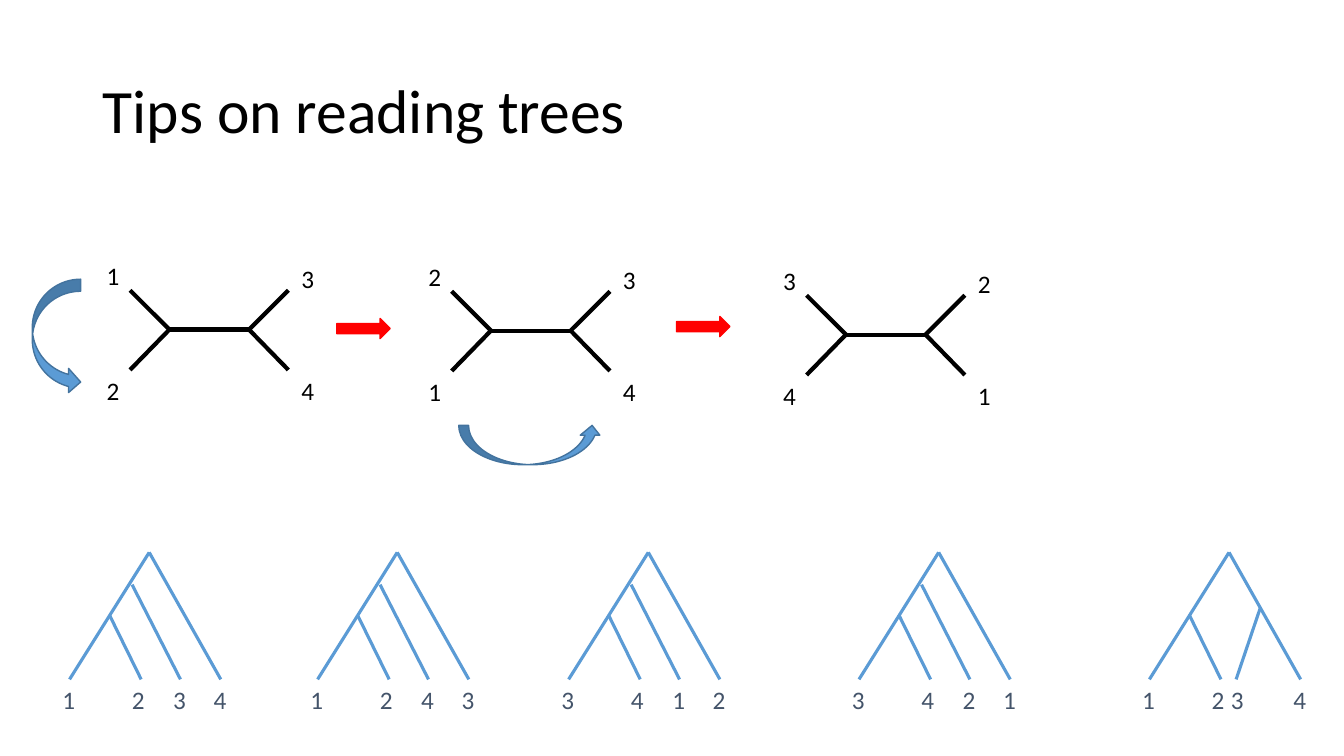
from lxml import etree
from pptx import Presentation
from pptx.dml.color import RGBColor
from pptx.enum import shapes, text
from pptx.oxml import ns
from pptx.util import Inches, Pt

BLACK = RGBColor(0x00, 0x00, 0x00)
BLUE = RGBColor(0x5B, 0x9B, 0xD5)
DARK_BLUE = RGBColor(0x43, 0x73, 0x9E)
SLATE = RGBColor(0x44, 0x54, 0x6A)
RED = RGBColor(0xFF, 0x00, 0x00)
FONT = "Calibri"

prs = Presentation()
prs.slide_width = Inches(13.33)
prs.slide_height = Inches(7.5)
slide = prs.slides.add_slide(prs.slide_layouts[5])


def add_branch(x1, y1, x2, y2, color, weight):
    branch = slide.shapes.add_connector(
        shapes.MSO_CONNECTOR.STRAIGHT, Inches(x1), Inches(y1), Inches(x2), Inches(y2))
    branch.line.color.rgb = color
    branch.line.width = Pt(weight)
    etree.SubElement(branch._element.spPr, ns.qn("a:effectLst"))


def add_taxon(name, x, y, color):
    taxon = slide.shapes.add_textbox(Inches(x), Inches(y), Inches(0.33), Inches(0.4))
    frame = taxon.text_frame
    frame.word_wrap = False
    frame.auto_size = text.MSO_AUTO_SIZE.SHAPE_TO_FIT_TEXT
    run = frame.paragraphs[0].add_run()
    run.text = name
    run.font.name = FONT
    run.font.size = Pt(18)
    run.font.color.rgb = color


# Title
title = slide.shapes.title
title.left, title.top = Inches(0.92), Inches(0.4)
title.width, title.height = Inches(11.5), Inches(1.45)
title.text_frame.vertical_anchor = text.MSO_ANCHOR.MIDDLE
heading = title.text_frame.paragraphs[0]
heading.alignment = text.PP_ALIGN.LEFT
heading.line_spacing = 0.9
heading_run = heading.add_run()
heading_run.text = "Tips on reading trees"
heading_run.font.name = FONT
heading_run.font.size = Pt(44)
heading_run.font.color.rgb = BLACK

# Unrooted trees: offsets from the upper left tip
UNROOTED_BRANCHES = [
    (0, 0, 0.39, 0.39),
    (0.39, 0.39, 0, 0.79),
    (0.39, 0.39, 1.18, 0.39),
    (1.57, 0, 1.18, 0.39),
    (1.18, 0.39, 1.57, 0.79),
]
UNROOTED_TAXA = [(-0.33, -0.35), (-0.33, 0.79), (1.6, -0.32), (1.6, 0.79)]
for left, top, taxa in [(1.29, 2.88, "1234"), (4.48, 2.89, "2134"), (8, 2.93, "3421")]:
    for x1, y1, x2, y2 in UNROOTED_BRANCHES:
        add_branch(left + x1, top + y1, left + x2, top + y2, BLACK, 3)
    for name, (dx, dy) in zip(taxa, UNROOTED_TAXA):
        add_taxon(name, left + dx, top + dy, BLACK)

# Rooted trees: the third tip branches off the left or the right side
ROOT_Y, TIP_Y = 5.48, 6.74
LADDER = ((0.62, 5.8, 1.1), 1.1)
BALANCED = ((1.1, 6.03, 0.86), 0.88)
for left, taxa, (third_branch, third_taxon_x) in [
    (0.69, "1234", LADDER),
    (3.15, "1243", LADDER),
    (5.64, "3412", LADDER),
    (8.52, "3421", LADDER),
    (11.4, "1234", BALANCED),
]:
    for x, y, tip_x in [(0.79, ROOT_Y, 0), (0.79, ROOT_Y, 1.5), (0.4, 6.11, 0.71), third_branch]:
        add_branch(left + x, y, left + tip_x, TIP_Y, BLUE, 2.25)
    for name, dx in zip(taxa, (0, 0.69, third_taxon_x, 1.5)):
        add_taxon(name, left + dx - 0.17, TIP_Y, SLATE)

# Rotation arrows and step arrows
ARROWS = shapes.MSO_SHAPE
for kind, x, y, width, height, fill, outline in [
    (ARROWS.CURVED_RIGHT_ARROW, 0.32, 2.77, 0.48, 1.14, BLUE, DARK_BLUE),
    (ARROWS.CURVED_UP_ARROW, 4.55, 4.22, 1.42, 0.39, BLUE, DARK_BLUE),
    (ARROWS.RIGHT_ARROW, 3.34, 3.16, 0.53, 0.2, RED, RED),
    (ARROWS.RIGHT_ARROW, 6.71, 3.14, 0.53, 0.2, RED, RED),
]:
    arrow = slide.shapes.add_shape(kind, Inches(x), Inches(y), Inches(width), Inches(height))
    arrow.shadow.inherit = False
    arrow.fill.solid()
    arrow.fill.fore_color.rgb = fill
    arrow.line.color.rgb = outline
    arrow.line.width = Pt(1)

prs.save("out.pptx")
